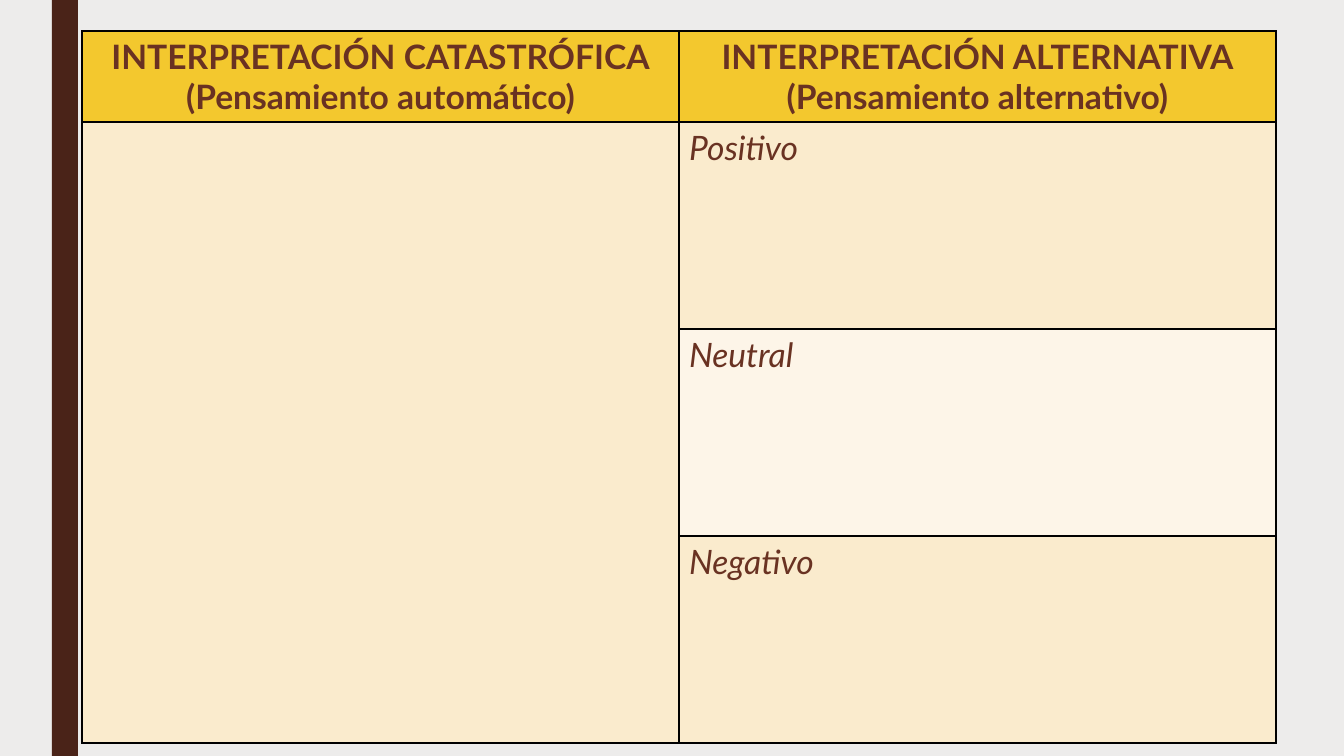
import pptx
import pptx.util
import pptx.dml.color
import pptx.enum.shapes
import pptx.enum.text
import pptx.oxml
import pptx.oxml.ns

PX = 914400 / 100.8
BROWN = "693222"
GOLD = "F3C82E"
CREAM = "FAEBCD"
PALE = "FDF5E8"


def px(length):
    return pptx.util.Emu(round(length * PX))


def paint(fill, color):
    fill.solid()
    fill.fore_color.rgb = pptx.dml.color.RGBColor.from_string(color)


presentation = pptx.Presentation()
presentation.slide_width = px(1344)
presentation.slide_height = px(756)
slide = presentation.slides.add_slide(presentation.slide_layouts[6])
paint(slide.background.fill, "EDECEB")

side_bar = slide.shapes.add_shape(
    pptx.enum.shapes.MSO_SHAPE.RECTANGLE, px(52), px(0), px(26), px(756)
)
side_bar.shadow.inherit = False
side_bar.line.fill.background()
paint(side_bar.fill, "4A2318")

rows = [
    (
        91,
        GOLD,
        "INTERPRETACIÓN CATASTRÓFICA\n(Pensamiento automático)",
        "INTERPRETACIÓN ALTERNATIVA\n(Pensamiento alternativo)",
    ),
    (207, CREAM, "", "Positivo"),
    (207, PALE, "", "Neutral"),
    (207, CREAM, "", "Negativo"),
]
table = slide.shapes.add_table(4, 2, px(82), px(31), px(1194), px(712)).table
for column in table.columns:
    column.width = px(597)

for row_index, (height, color, *texts) in enumerate(rows):
    table.rows[row_index].height = px(height)
    is_header = row_index == 0
    for column_index, text in enumerate(texts):
        cell = table.cell(row_index, column_index)
        properties = cell._tc.get_or_add_tcPr()
        for side in ("lnL", "lnR", "lnT", "lnB"):
            properties.append(pptx.oxml.parse_xml(
                f'<a:{side} {pptx.oxml.ns.nsdecls("a")} w="12700"><a:solidFill>'
                f'<a:srgbClr val="000000"/></a:solidFill></a:{side}>'
            ))
        paint(cell.fill, color)
        cell.text = text
        for paragraph in cell.text_frame.paragraphs:
            paragraph.font.name = "Lato"
            paragraph.font.size = pptx.util.Pt(24)
            paragraph.font.bold = is_header
            paragraph.font.italic = not is_header
            paint(paragraph.font.fill, BROWN)
            if is_header:
                paragraph.alignment = pptx.enum.text.PP_ALIGN.CENTER

table.cell(1, 0).merge(table.cell(3, 0))

presentation.save("out.pptx")
